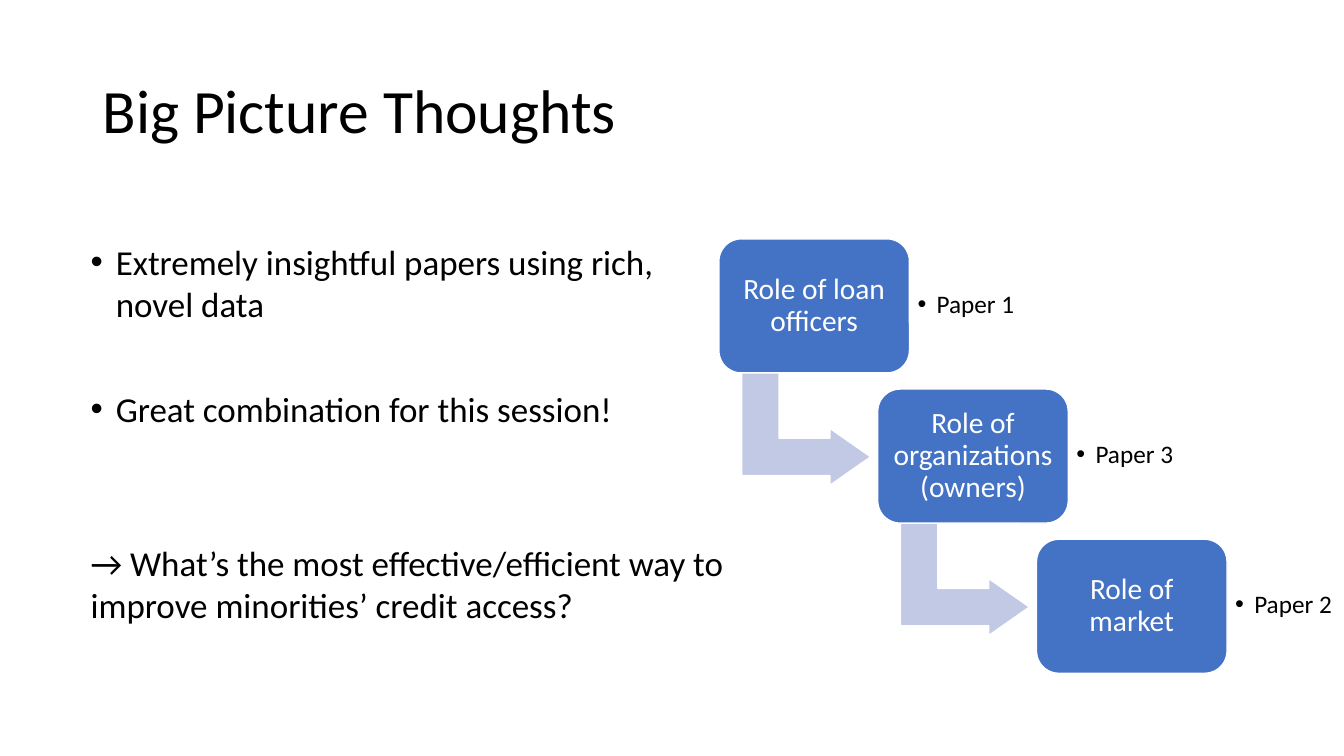
from dataclasses import dataclass

from lxml.etree import SubElement
from pptx import Presentation
from pptx.dml.color import RGBColor
from pptx.enum.shapes import MSO_SHAPE as Shape
from pptx.enum.text import MSO_ANCHOR as Anchor, PP_ALIGN as Align
from pptx.oxml.ns import qn
from pptx.util import Inches, Pt

TITLE = "Big Picture Thoughts"
# (text, bulleted, points of space before)
THOUGHTS = [
    ("Extremely insightful papers using rich, novel data", True, 0),
    ("Great combination for this session!", True, 45),
    ("→ What’s the most effective/efficient way to improve minorities’ credit access?",
     False, 80),
]
# (role, paper that covers it)
STEPS = [
    ("Role of loan officers", "Paper 1"),
    ("Role of organizations (owners)", "Paper 3"),
    ("Role of market", "Paper 2"),
]


@dataclass(frozen=True)
class Theme:
    font: str = "Calibri"
    ink: str = "000000"
    paper: str = "FFFFFF"
    box: str = "4472C4"
    arrow: str = "C1C9E4"
    title_size: int = 44
    body_size: int = 25
    role_size: int = 21
    label_size: int = 18


THEME = Theme()
SLIDE_W, SLIDE_H = 13.33, 7.5
STAIR_LEFT, STAIR_TOP = 7.13, 2.37
STEP_X, STEP_Y = 1.575, 1.49
BOX_W, BOX_H = 1.89, 1.33
ARROW_W, ARROW_H = 1.13, 1.28
ARROW_DX, ARROW_DY = 0.3, 1.24
LABEL_W, LABEL_H = 1.15, 1.07
LABEL_DX, LABEL_DY = 1.9, 0.12


def rgb(color):
    return RGBColor.from_string(color)


def set_frame(frame, anchor, side, top):
    frame.word_wrap = True
    frame.vertical_anchor = anchor
    frame.margin_left = frame.margin_right = Inches(side)
    frame.margin_top = frame.margin_bottom = Inches(top)


def write(paragraph, text, size, color=THEME.ink, spacing=1.0, align=Align.LEFT):
    paragraph.alignment = align
    paragraph.line_spacing = spacing
    run = paragraph.add_run()
    run.text = text
    run.font.name = THEME.font
    run.font.size = Pt(size)
    run.font.color.rgb = rgb(color)


def add_bullet(paragraph, indent):
    """Give the paragraph a round bullet hanging by indent inches."""
    properties = paragraph._p.get_or_add_pPr()
    properties.set("marL", str(Inches(indent)))
    properties.set("indent", str(-Inches(indent)))
    SubElement(properties, qn("a:buFont"), typeface="Arial")
    SubElement(properties, qn("a:buChar"), char="•")


def add_text_box(slide, left, top, width, height, anchor, side=0.1, inset=0.05):
    box = slide.shapes.add_textbox(*map(Inches, (left, top, width, height)))
    set_frame(box.text_frame, anchor, side, inset)
    return box.text_frame


def add_block(slide, kind, left, top, width, height, fill, adjustments):
    block = slide.shapes.add_shape(kind, *map(Inches, (left, top, width, height)))
    block.shadow.inherit = False
    block.fill.solid()
    block.fill.fore_color.rgb = rgb(fill)
    block.line.color.rgb = rgb(THEME.paper)
    block.line.width = Pt(1)
    for index, value in enumerate(adjustments):
        block.adjustments[index] = value
    return block


def add_thoughts(slide):
    frame = add_text_box(slide, 0.8, 2.34, 6.59, 4.76, Anchor.TOP)
    for index, (thought, bulleted, space) in enumerate(THOUGHTS):
        paragraph = frame.add_paragraph() if index else frame.paragraphs[0]
        write(paragraph, thought, THEME.body_size)
        paragraph.space_before = Pt(space)
        if bulleted:
            add_bullet(paragraph, 0.25)


def add_step(slide, index, role, paper):
    left, top = STAIR_LEFT + index * STEP_X, STAIR_TOP + index * STEP_Y
    if index < len(STEPS) - 1:
        arrow = add_block(slide, Shape.BENT_UP_ARROW, left + ARROW_DX, top + ARROW_DY,
                          ARROW_W, ARROW_H, THEME.arrow, (0.328, 0.25, 0.358))
        arrow.rotation = 90
    box = add_block(slide, Shape.ROUNDED_RECTANGLE, left, top, BOX_W, BOX_H,
                    THEME.box, (0.167,))
    set_frame(box.text_frame, Anchor.MIDDLE, 0.07, 0.09)
    write(box.text_frame.paragraphs[0], role, THEME.role_size, THEME.paper, 0.9,
          Align.CENTER)
    label = add_text_box(slide, left + LABEL_DX, top + LABEL_DY, LABEL_W, LABEL_H,
                         Anchor.MIDDLE, 0.07, 0.07).paragraphs[0]
    write(label, paper, THEME.label_size, spacing=0.9)
    add_bullet(label, 0.19)


def main():
    deck = Presentation()
    deck.slide_width, deck.slide_height = Inches(SLIDE_W), Inches(SLIDE_H)
    slide = deck.slides.add_slide(deck.slide_layouts[6])
    title = add_text_box(slide, 0.92, 0.4, 11.5, 1.45, Anchor.MIDDLE)
    write(title.paragraphs[0], TITLE, THEME.title_size, spacing=0.9)
    add_thoughts(slide)
    for index, (role, paper) in enumerate(STEPS):
        add_step(slide, index, role, paper)
    deck.save("out.pptx")


if __name__ == "__main__":
    main()
